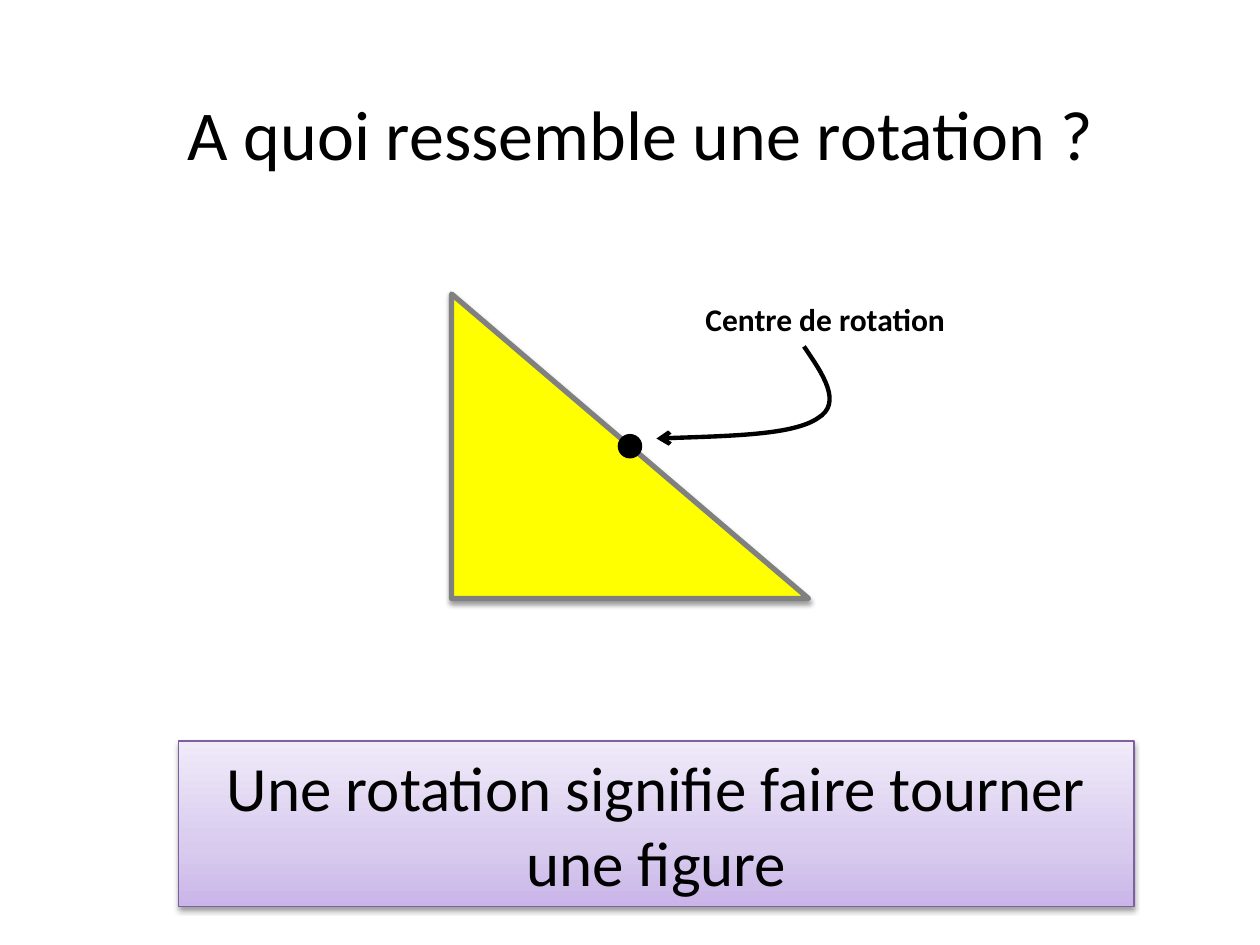
from copy import deepcopy
from dataclasses import dataclass

from lxml.etree import SubElement
from pptx import Presentation
from pptx.dml.color import RGBColor
from pptx.enum.shapes import MSO_SHAPE
from pptx.enum.text import MSO_ANCHOR, MSO_AUTO_SIZE, PP_ALIGN
from pptx.oxml.ns import qn
from pptx.util import Pt


@dataclass(frozen=True)
class Theme:
    font: str = "Calibri"
    black: str = "000000"
    yellow: str = "FFFF00"
    gray: str = "808080"
    purple: str = "7D60A0"
    gradient: tuple = ((0, "C9B5E8"), (0.35, "D8CBEE"), (1, "F0EAF9"))
    title_size: int = 40
    banner_size: int = 36
    label_size: int = 18


THEME = Theme()


def rgb(value):
    return RGBColor.from_string(value)


def set_text(shape, text, size, align, bold=False, anchor=MSO_ANCHOR.MIDDLE):
    frame = shape.text_frame
    frame.text = text
    frame.word_wrap = True
    frame.auto_size = MSO_AUTO_SIZE.NONE
    frame.vertical_anchor = anchor
    para = frame.paragraphs[0]
    para.alignment = align
    for span in para.runs:
        span.font.name = THEME.font
        span.font.size = Pt(size)
        span.font.bold = bold
        span.font.color.rgb = rgb(THEME.black)


def set_line(shape, color, width):
    shape.line.color.rgb = rgb(color)
    shape.line.width = Pt(width)


def add_preset(page, kind, box, line_color, line_width, fill=None):
    shape = page.shapes.add_shape(kind, *map(Pt, box))
    shape.shadow.inherit = False
    set_line(shape, line_color, line_width)
    if fill:
        shape.fill.solid()
        shape.fill.fore_color.rgb = rgb(fill)
    return shape


def add_soft_shadow(shape):
    effects = shape._element.spPr.find(qn("a:effectLst"))
    shadow = SubElement(effects, qn("a:outerShdw"), blurRad=str(Pt(3.1)),
                        dist=str(Pt(1.6)), dir="5400000", rotWithShape="0")
    color = SubElement(shadow, qn("a:srgbClr"), val=THEME.black)
    SubElement(color, qn("a:alpha"), val="38000")


def set_gradient(shape, stops):
    """Run the three stops from the bottom edge up to the top edge."""
    shape.fill.gradient()
    shape.fill.gradient_angle = 90
    stop_list = shape._element.spPr.find(qn("a:gradFill")).find(qn("a:gsLst"))
    stop_list.insert(1, deepcopy(stop_list[0]))
    for stop, (position, color) in zip(shape.fill.gradient_stops, stops):
        stop.position = position
        stop.color.rgb = rgb(color)


def place_title(page, box):
    title = page.shapes.title
    title.left, title.top, title.width, title.height = map(Pt, box)
    set_text(title, "A quoi ressemble une rotation ?", THEME.title_size, PP_ALIGN.CENTER)


def add_banner(page, box):
    banner = add_preset(page, MSO_SHAPE.RECTANGLE, box, THEME.purple, 0.75)
    set_gradient(banner, THEME.gradient)
    add_soft_shadow(banner)
    set_text(banner, "Une rotation signifie faire tourner une figure",
             THEME.banner_size, PP_ALIGN.CENTER)


def add_triangle(page, box, dot_size):
    """Draw the triangle with its centre of rotation halfway along the long side."""
    left, top, width, height = box
    triangle = add_preset(page, MSO_SHAPE.RIGHT_TRIANGLE, box, THEME.gray, 3, THEME.yellow)
    add_soft_shadow(triangle)
    dot_box = (left + (width - dot_size) / 2, top + (height - dot_size) / 2,
               dot_size, dot_size)
    add_preset(page, MSO_SHAPE.OVAL, dot_box, THEME.black, 2, THEME.black)


def add_curved_arrow(page, points):
    """Join a start point and triples of Bezier points, with an arrowhead at the end."""
    builder = page.shapes.build_freeform(*map(Pt, points[0]), scale=1.0)
    builder.add_line_segments([(Pt(x), Pt(y)) for x, y in points[1:]], close=False)
    arrow = builder.convert_to_shape()
    arrow.shadow.inherit = False
    arrow.fill.background()
    set_line(arrow, THEME.black, 2.5)
    outline = next(arrow._element.iter(qn("a:path")))
    segments = outline.findall(qn("a:lnTo"))
    for start in range(0, len(segments), 3):
        curve = SubElement(outline, qn("a:cubicBezTo"))
        for segment in segments[start:start + 3]:
            curve.append(segment[0])
            outline.remove(segment)
    SubElement(arrow.line._get_or_add_ln(), qn("a:tailEnd"), type="arrow")


def add_callout(page, box):
    left, top, width, height = box
    label = page.shapes.add_textbox(*map(Pt, (left, top, width, 29)))
    set_text(label, "Centre de rotation", THEME.label_size, PP_ALIGN.LEFT,
             bold=True, anchor=MSO_ANCHOR.TOP)
    bottom = top + height
    add_curved_arrow(page, [
        (left + 63.4, top + 30),
        (left + 74.2, top + 45.8), (left + 85.7, top + 62.4), (left + 71.3, top + 71),
        (left + 57.6, bottom - 2.2), (left + 18, bottom - 1.4), (left - 20.9, bottom),
    ])


def main():
    deck = Presentation()
    deck.slide_width, deck.slide_height = Pt(720), Pt(540)
    page = deck.slides.add_slide(deck.slide_layouts[5])
    place_title(page, (18, 48, 696, 55.7))
    add_banner(page, (102, 423.5, 546, 94.5))
    add_triangle(page, (258, 168, 204, 174), 12)
    add_callout(page, (396, 168, 162, 82.6))
    deck.save("out.pptx")


if __name__ == "__main__":
    main()
